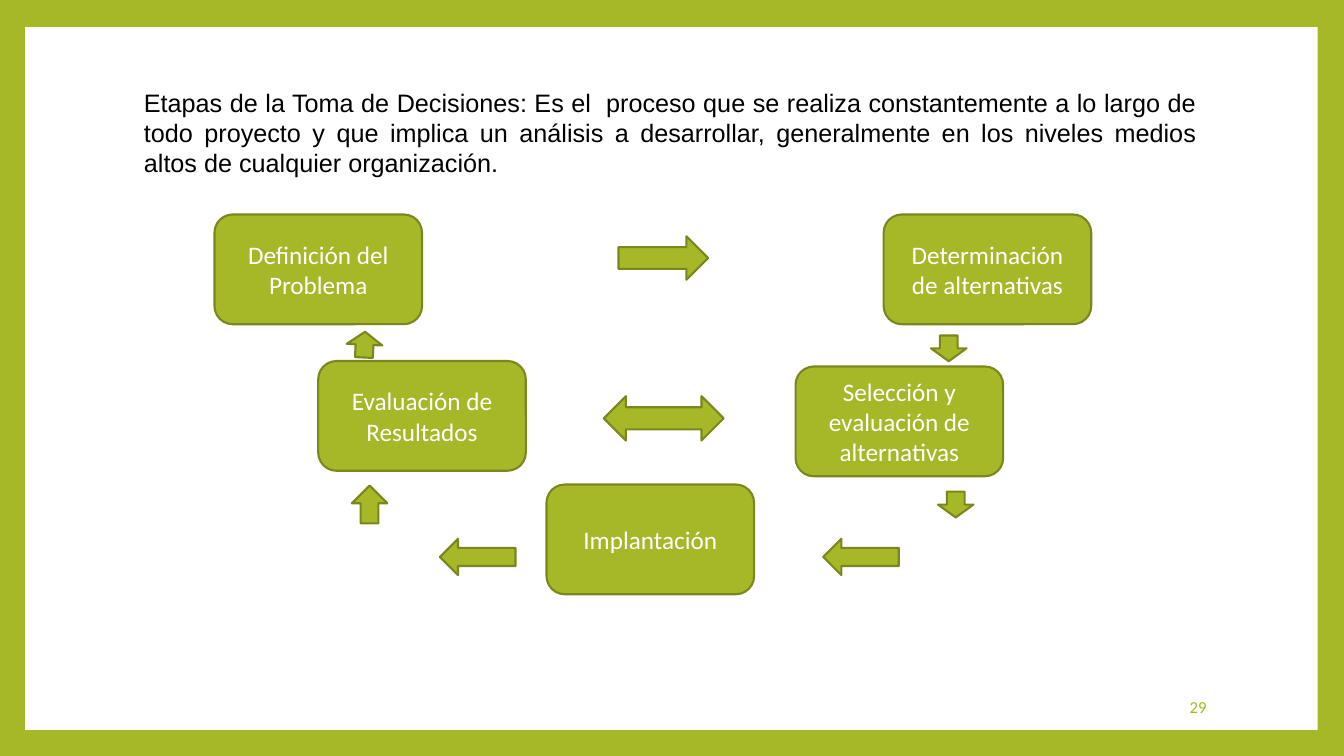
from pptx import Presentation
from pptx.dml.color import RGBColor
from pptx.enum.shapes import MSO_SHAPE
from pptx.enum.text import MSO_ANCHOR, PP_ALIGN
from pptx.util import Pt

GREEN = RGBColor(0xA6, 0xB7, 0x27)
OLIVE = RGBColor(0x7B, 0x87, 0x1D)
WHITE = RGBColor(0xFF, 0xFF, 0xFF)
BLACK = RGBColor(0, 0, 0)

RECT, ROUND = MSO_SHAPE.RECTANGLE, MSO_SHAPE.ROUNDED_RECTANGLE
LEFT, RIGHT = MSO_SHAPE.LEFT_ARROW, MSO_SHAPE.RIGHT_ARROW
UP, DOWN = MSO_SHAPE.UP_ARROW, MSO_SHAPE.DOWN_ARROW
BOTH = MSO_SHAPE.LEFT_RIGHT_ARROW
TOP, MIDDLE = MSO_ANCHOR.TOP, MSO_ANCHOR.MIDDLE
CENTER, END, JUSTIFY = PP_ALIGN.CENTER, PP_ALIGN.RIGHT, PP_ALIGN.JUSTIFY

INTRO = (
    "Etapas de la Toma de Decisiones: Es el  proceso que se realiza "
    "constantemente a lo largo de todo proyecto y que implica un análisis "
    "a desarrollar, generalmente en los niveles medios altos de cualquier "
    "organización."
)
PAGE = "29"

# Stage: text, left, top
STAGES = [
    ("Definición del Problema", 153.2, 153.2),
    ("Determinación de alternativas", 631.2, 153.2),
    ("Evaluación de Resultados", 227.3, 257.9),
    ("Implantación", 390.4, 346.1),
    ("Selección y evaluación de alternativas", 568.3, 261.8),
]
STAGE_SIZE = (148.3, 78.4)

# Arrow: kind, left, top, width, height, turn
ARROWS = [
    (RIGHT, 441.8, 168.8, 64, 31, 0),
    (DOWN, 665, 239.6, 25.4, 18.4, 0),
    (DOWN, 670, 351.2, 25.4, 18.4, 0),
    (LEFT, 588, 384.8, 54, 26, 0),
    (LEFT, 314.2, 384.8, 54, 26, 0),
    (UP, 251.3, 346.8, 25.4, 27, 0),
    (UP, 247.7, 237, 25.4, 18.4, 2.7),
    (BOTH, 431.2, 283, 85.7, 31.7, 0),
]


def add_form(slide, kind, box, fill, line=None):
    form = slide.shapes.add_shape(kind, *map(Pt, box))
    form.shadow.inherit = False
    form.fill.solid()
    form.fill.fore_color.rgb = fill
    if line is None:
        form.line.fill.background()
    else:
        form.line.color.rgb = line
        form.line.width = Pt(1.5)
    return form


def set_text(shape, text, font, size, color, align, anchor=MIDDLE):
    frame = shape.text_frame
    frame.word_wrap = True
    frame.vertical_anchor = anchor
    frame.text = text
    para = frame.paragraphs[0]
    para.alignment = align
    style = para.runs[0].font
    style.name, style.size = font, Pt(size)
    style.color.rgb = color


def main():
    deck = Presentation()
    deck.slide_width, deck.slide_height = Pt(960), Pt(540)
    slide = deck.slides.add_slide(deck.slide_layouts[6])
    back = slide.background.fill
    back.solid()
    back.fore_color.rgb = GREEN
    add_form(slide, RECT, (18, 19.3, 923.2, 502), WHITE)

    intro = slide.shapes.add_textbox(Pt(95.7), Pt(58.5), Pt(766), Pt(72.7))
    set_text(intro, INTRO, "Arial", 18, BLACK, JUSTIFY, TOP)

    for text, left, top in STAGES:
        stage = add_form(slide, ROUND, (left, top, *STAGE_SIZE), GREEN, OLIVE)
        set_text(stage, text, "Calibri", 18, WHITE, CENTER)

    for kind, *box, turn in ARROWS:
        add_form(slide, kind, box, GREEN, OLIVE).rotation = turn

    page = slide.shapes.add_textbox(Pt(734.4), Pt(490.3), Pt(134.6), Pt(28.8))
    set_text(page, PAGE, "Calibri", 12, GREEN, END)

    deck.save("out.pptx")


if __name__ == "__main__":
    main()
